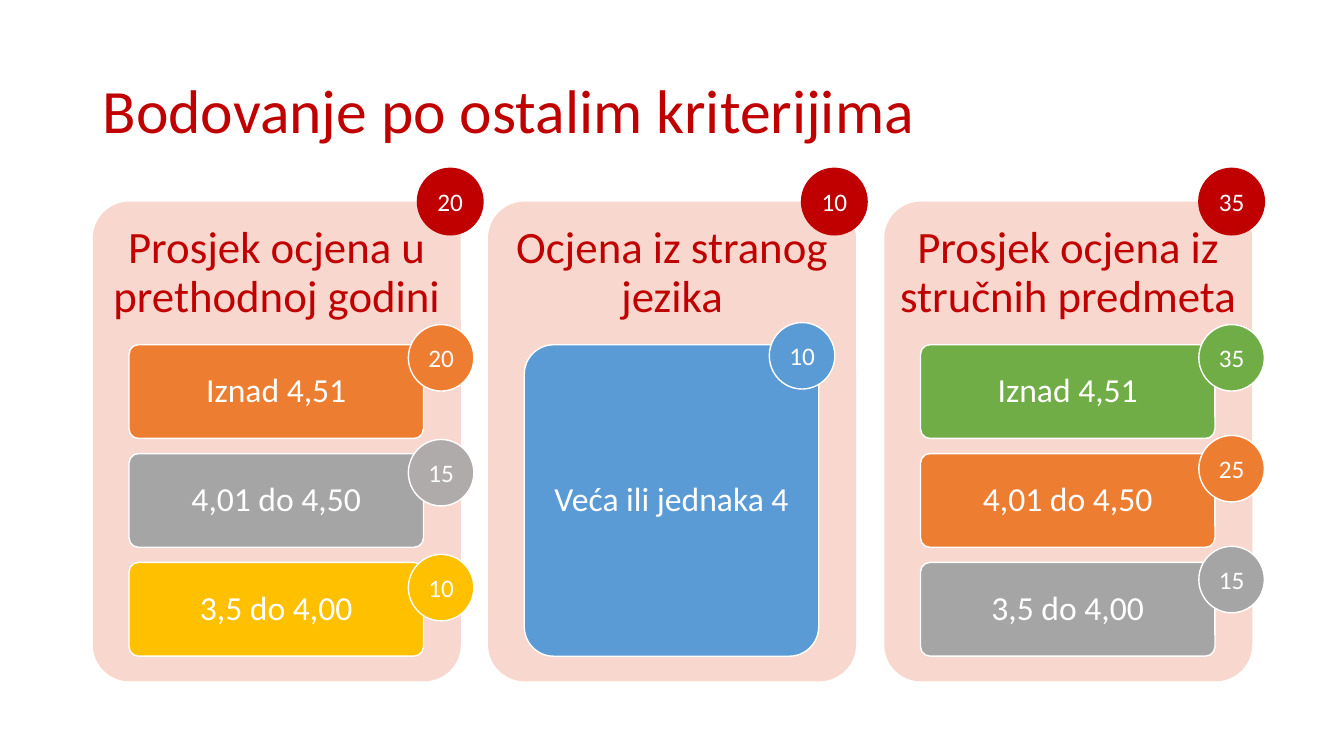
from pptx import Presentation
from pptx.dml.color import RGBColor
from pptx.enum.shapes import MSO_SHAPE
from pptx.enum.text import MSO_ANCHOR, PP_ALIGN
from pptx.util import Inches, Pt

RED, WHITE, PINK = "C00000", "FFFFFF", "F8D7CE"
ORANGE, GRAY, YELLOW, BLUE, GREEN = "ED7D31", "A5A5A5", "FFC000", "5B9BD5", "70AD47"

CARD_TOP, CARD_WIDTH, CARD_HEIGHT = 2, 3.65, 4.76
HEADING_HEIGHT = 1.43
BOX_TOP, BOX_INDENT, BOX_WIDTH, BOX_GAP = 3.42, 0.36, 2.92, 0.15
BOXES_HEIGHT = 3.09
BADGE_WIDTH, BADGE_HEIGHT = 0.65, 0.66


def write(shape, text, size, color, margin, align=PP_ALIGN.CENTER, line_spacing=0.9):
    frame = shape.text_frame
    frame_format = {"word_wrap": True, "vertical_anchor": MSO_ANCHOR.MIDDLE}
    for side in ("left", "top", "right", "bottom"):
        frame_format[f"margin_{side}"] = Inches(margin)
    for name, value in frame_format.items():
        setattr(frame, name, value)
    paragraph = frame.paragraphs[0]
    paragraph.alignment = align
    paragraph.line_spacing = line_spacing
    run = paragraph.add_run()
    run.text = text
    for name, value in {"name": "Calibri", "size": Pt(size)}.items():
        setattr(run.font, name, value)
    run.font.color.rgb = RGBColor.from_string(color)


def add_filled(kind, left, top, width, height, fill, line=None):
    shape = slide.shapes.add_shape(
        kind, Inches(left), Inches(top), Inches(width), Inches(height))
    shape.shadow.inherit = False
    shape.fill.solid()
    shape.fill.fore_color.rgb = RGBColor.from_string(fill)
    if line:
        shape.line.color.rgb = RGBColor.from_string(line)
        shape.line.width = Pt(1)
    else:
        shape.line.fill.background()
    if kind == MSO_SHAPE.ROUNDED_RECTANGLE:
        shape.adjustments[0] = 0.1
    return shape


presentation = Presentation()
presentation.slide_width = Inches(13.33)
presentation.slide_height = Inches(7.5)
slide = presentation.slides.add_slide(presentation.slide_layouts[6])

title = slide.shapes.add_textbox(Inches(0.92), Inches(0.4), Inches(11.5), Inches(1.45))
write(title, "Bodovanje po ostalim kriterijima", 44, RED, 0.1, PP_ALIGN.LEFT)

# Each criterion: card left, heading, maximum points, its badge left,
# first grade badge (left, top, step), grades (text, color, points, badge color)
criteria = [
    (0.92, "Prosjek ocjena u prethodnoj godini", "20", 4.14, (4.05, 3.22, 1.14), [
        ("Iznad 4,51", ORANGE, "20", ORANGE),
        ("4,01 do 4,50", GRAY, "15", "AFABAB"),
        ("3,5 do 4,00", YELLOW, "10", YELLOW)]),
    (4.84, "Ocjena iz stranog jezika", "10", 7.95, (7.63, 3.2, 0), [
        ("Veća ili jednaka 4", BLUE, "10", BLUE)]),
    (8.77, "Prosjek ocjena iz stručnih predmeta", "35", 11.89, (11.89, 3.22, 1.1), [
        ("Iznad 4,51", GREEN, "35", GREEN),
        ("4,01 do 4,50", ORANGE, "25", ORANGE),
        ("3,5 do 4,00", GRAY, "15", GRAY)]),
]

for card_left, heading_text, maximum, maximum_left, badge_place, grades in criteria:
    add_filled(MSO_SHAPE.ROUNDED_RECTANGLE, card_left, CARD_TOP,
               CARD_WIDTH, CARD_HEIGHT, PINK)
    heading = slide.shapes.add_textbox(
        Inches(card_left), Inches(CARD_TOP), Inches(CARD_WIDTH), Inches(HEADING_HEIGHT))
    write(heading, heading_text, 32, RED, 0.13)

    badges = [(maximum_left, 1.67, maximum, RED, RED)]
    badge_left, badge_top, badge_step = badge_place
    box_height = (BOXES_HEIGHT - BOX_GAP * (len(grades) - 1)) / len(grades)
    for row, (grade, color, points, badge_color) in enumerate(grades):
        box = add_filled(MSO_SHAPE.ROUNDED_RECTANGLE, card_left + BOX_INDENT,
                         BOX_TOP + row * (box_height + BOX_GAP),
                         BOX_WIDTH, box_height, color, WHITE)
        write(box, grade, 24, WHITE, 0.05)
        badges.append((badge_left, badge_top + row * badge_step, points, badge_color, WHITE))

    for left, top, points, fill, line in badges:
        badge = add_filled(MSO_SHAPE.OVAL, left, top, BADGE_WIDTH, BADGE_HEIGHT, fill, line)
        write(badge, points, 18, WHITE, 0, line_spacing=1.0)

presentation.save("out.pptx")
